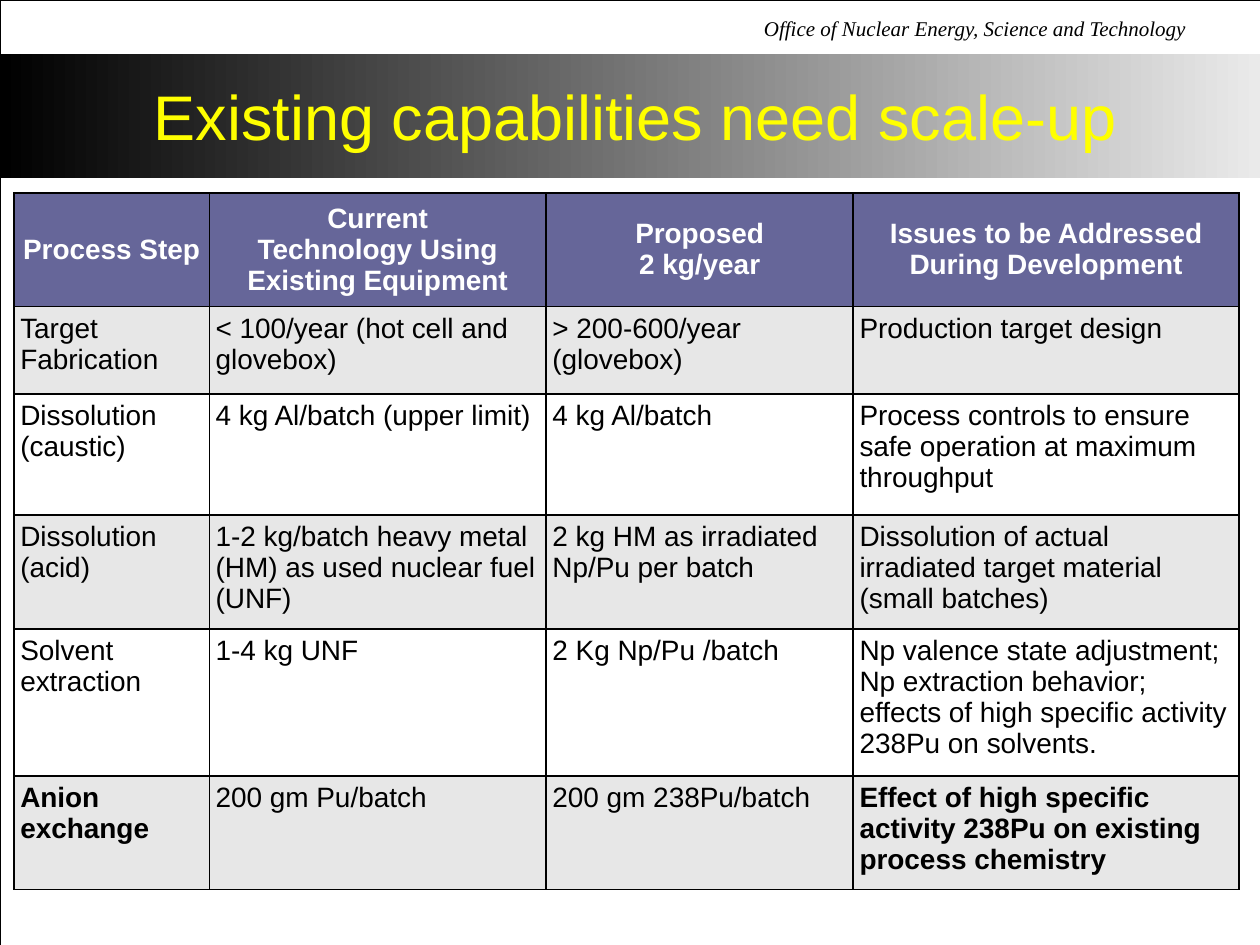
from dataclasses import dataclass
from lxml.etree import SubElement as Sub
from pptx import Presentation
from pptx.dml.color import RGBColor as RGB
from pptx.enum.shapes import MSO_SHAPE as Kind
from pptx.enum.text import MSO_ANCHOR as Anchor, PP_ALIGN as Align
from pptx.oxml.ns import qn
from pptx.util import Pt


@dataclass(frozen=True)
class Theme:
    sans: str = "Arial"
    serif: str = "Times New Roman"
    black: str = "000000"
    white: str = "FFFFFF"
    pale: str = "EAEAEA"
    head: str = "666699"
    band: str = "E7E7E7"
    gold: str = "FFFF00"
    title: int = 36
    body: int = 16
    note: int = 12
    pad: float = 3.6


class Deck:
    def __init__(self, theme):
        self.theme = theme
        self.deck = Presentation()
        self.deck.slide_width, self.deck.slide_height = Pt(720), Pt(540)
        self.slide = self.deck.slides.add_slide(self.deck.slide_layouts[6])

    def rect(self, x, y, w, h):
        shape = self.slide.shapes.add_shape(Kind.RECTANGLE, Pt(x), Pt(y), Pt(w), Pt(h))
        shape.shadow.inherit = False
        return shape

    def banner(self, x, y, w, h):
        shape = self.rect(x, y, w, h)
        shape.line.fill.background()
        shape.fill.gradient()
        shape.fill.gradient_angle = 0
        tones = self.theme.black, self.theme.pale
        for stop, tone, spot in zip(shape.fill.gradient_stops, tones, (0, 1)):
            stop.color.rgb = RGB.from_string(tone)
            stop.position = spot

    def frame(self, x, y, w, h):
        shape = self.rect(x, y, w, h)
        shape.fill.background()
        shape.line.color.rgb = RGB.from_string(self.theme.black)
        shape.line.width = Pt(0.25)

    def add_run(self, para, text, size, tone, face, align=Align.LEFT, bold=False, slant=False):
        para.alignment = align
        run = para.add_run()
        run.text = text
        font = run.font
        font.size, font.name, font.bold, font.italic = Pt(size), face, bold, slant
        font.color.rgb = RGB.from_string(tone)
        return run

    def box(self, x, y, w, h, wrap):
        frame = self.slide.shapes.add_textbox(Pt(x), Pt(y), Pt(w), Pt(h)).text_frame
        frame.word_wrap = wrap
        return frame

    def note(self, text, *area):
        para = self.box(*area, False).paragraphs[0]
        para.line_spacing = 0.75
        self.add_run(para, text, self.theme.note, self.theme.black, self.theme.serif,
                     Align.RIGHT, slant=True)

    def title(self, text, *area):
        frame = self.box(*area, True)
        frame.vertical_anchor = Anchor.MIDDLE
        run = self.add_run(frame.paragraphs[0], text, self.theme.title, self.theme.gold,
                           self.theme.sans, Align.CENTER)
        props = run._r.get_or_add_rPr()
        glow = Sub(props, qn("a:effectLst"))
        props.find(qn("a:solidFill")).addnext(glow)
        cast = Sub(glow, qn("a:outerShdw"), dist="35921", dir="2700000", algn="ctr")
        Sub(cast, qn("a:srgbClr"), val=self.theme.black)

    def edge(self, cell):
        props = cell._tc.get_or_add_tcPr()
        for side in "LRTB":
            line = Sub(props, qn(f"a:ln{side}"), w=str(int(Pt(1))))
            fill = Sub(line, qn("a:solidFill"))
            Sub(fill, qn("a:srgbClr"), val=self.theme.black)

    def cell(self, cell, text, fill, tone, align, anchor, bold):
        self.edge(cell)
        cell.fill.solid()
        cell.fill.fore_color.rgb = RGB.from_string(fill)
        cell.vertical_anchor = anchor
        cell.margin_left = cell.margin_right = Pt(self.theme.pad)
        cell.margin_top = cell.margin_bottom = Pt(self.theme.pad)
        frame = cell.text_frame
        for i, part in enumerate(text.split("\n")):
            para = frame.add_paragraph() if i else frame.paragraphs[0]
            self.add_run(para, part, self.theme.body, tone, self.theme.sans, align, bold)

    def table(self, x, y, wide, high, rows, strong):
        look = self.theme
        table = self.slide.shapes.add_table(
            len(rows), len(wide), Pt(x), Pt(y), Pt(sum(wide)), Pt(sum(high))).table
        table.first_row = table.horz_banding = False
        for col, size in zip(table.columns, wide):
            col.width = Pt(size)
        for r, (row, size) in enumerate(zip(rows, high)):
            table.rows[r].height = Pt(size)
            for c, text in enumerate(row):
                cell = table.cell(r, c)
                if r == 0:
                    self.cell(cell, text, look.head, look.white,
                              Align.CENTER, Anchor.MIDDLE, True)
                else:
                    fill = look.band if r % 2 else look.white
                    self.cell(cell, text, fill, look.black,
                              Align.LEFT, Anchor.TOP, (r, c) in strong)


ROWS = [
    ("Process Step", "Current\nTechnology Using\nExisting Equipment",
     "Proposed\n2 kg/year", "Issues to be Addressed During Development"),
    ("Target Fabrication", "< 100/year (hot cell and glovebox)",
     "> 200-600/year (glovebox)", "Production target design"),
    ("Dissolution (caustic)", "4 kg Al/batch (upper limit)", "4 kg Al/batch",
     "Process controls to ensure safe operation at maximum throughput"),
    ("Dissolution (acid)", "1-2 kg/batch heavy metal (HM) as used nuclear fuel (UNF)",
     "2 kg HM as irradiated Np/Pu per batch",
     "Dissolution of actual irradiated target material (small batches)"),
    ("Solvent extraction", "1-4 kg UNF", "2 Kg Np/Pu /batch",
     "Np valence state adjustment; Np extraction behavior; "
     "effects of high specific activity 238Pu on solvents."),
    ("Anion exchange", "200 gm Pu/batch", "200 gm 238Pu/batch",
     "Effect of high specific activity 238Pu on existing process chemistry"),
]


def main():
    show = Deck(Theme())
    show.banner(0, 31, 720, 71)
    show.frame(0, 0, 720, 540)
    show.note("Office of Nuclear Energy, Science and Technology ", 426, 8.6, 262, 18)
    show.table(8, 110.2, (111.6, 192.5, 175.5, 220.5), (65, 50, 69.2, 65, 83.8, 65),
               ROWS, {(5, 0), (5, 3)})
    show.title("Existing capabilities need scale-up", 24, 48, 678, 36)
    show.deck.save("out.pptx")


if __name__ == "__main__":
    main()
